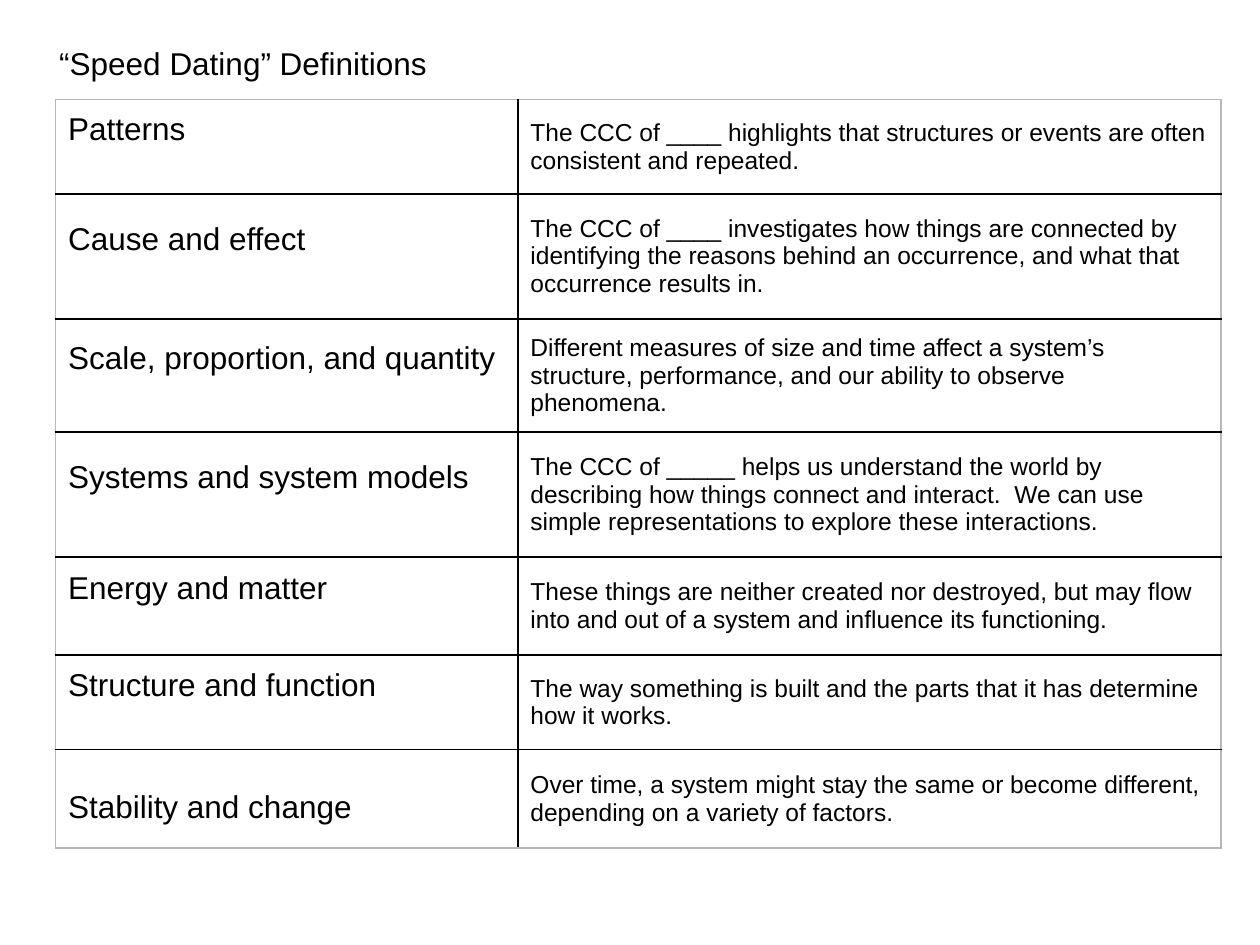
import pptx
import pptx.dml.color
import pptx.enum.text
import pptx.oxml
import pptx.oxml.ns
import pptx.util

Inches, Pt = pptx.util.Inches, pptx.util.Pt

HEADING = "“Speed Dating” Definitions"
# concept, definition, row height in inches
CONCEPTS = [
    ("Patterns",
     "The CCC of ____ highlights that structures or events are often consistent and repeated.", 0.75),
    ("Cause and effect",
     "The CCC of ____ investigates how things are connected by identifying the reasons behind "
     "an occurrence, and what that occurrence results in.", 0.99),
    ("Scale, proportion, and quantity",
     "Different measures of size and time affect a system’s structure, performance, and our "
     "ability to observe phenomena.", 0.9),
    ("Systems and system models",
     "The CCC of _____ helps us understand the world by describing how things connect and "
     "interact.  We can use simple representations to explore these interactions.", 0.99),
    ("Energy and matter",
     "These things are neither created nor destroyed, but may flow into and out of a system "
     "and influence its functioning.", 0.78),
    ("Structure and function",
     "The way something is built and the parts that it has determine how it works.", 0.75),
    ("Stability and change",
     "Over time, a system might stay the same or become different, depending on a variety "
     "of factors.", 0.78),
]

THEME = {
    "font": "Arial", "ink": "000000", "paper": "FFFFFF", "frame": "B7B7B7",
    "large": 18, "small": 14, "rule": 1,
}
SLIDE = (10, 7.5)
GRID_LEFT, GRID_TOP = 0.44, 0.79
COLUMNS = (3.67, 5.58)
CONCEPT_LIFT = 0.32     # bottom margin that raises the concept above the row's middle
LAST_LINE_SPACING = 1.5


def style(paragraph, size):
    formats = {"name": THEME["font"], "size": Pt(size), "bold": False}
    for key, value in formats.items():
        setattr(paragraph.font, key, value)
    paragraph.font.color.rgb = pptx.dml.color.RGBColor.from_string(THEME["ink"])


def add_border(cell, side, color):
    cell._tc.get_or_add_tcPr().append(pptx.oxml.parse_xml(
        f'<a:ln{side} {pptx.oxml.ns.nsdecls("a")} w="{Pt(THEME["rule"])}">'
        f'<a:solidFill><a:srgbClr val="{color}"/></a:solidFill></a:ln{side}>'))


def add_heading(slide):
    heading = slide.shapes.title
    box = {"left": 0.37, "top": 0.3, "width": 5.78, "height": 0.4}
    for key, value in box.items():
        setattr(heading, key, Inches(value))
    frame = heading.text_frame
    frame.text = HEADING
    frame.vertical_anchor = pptx.enum.text.MSO_ANCHOR.TOP
    frame.auto_size = pptx.enum.text.MSO_AUTO_SIZE.SHAPE_TO_FIT_TEXT
    frame.paragraphs[0].alignment = pptx.enum.text.PP_ALIGN.LEFT
    style(frame.paragraphs[0], THEME["large"])


def add_definitions(slide):
    heights = [height for _, _, height in CONCEPTS]
    grid = slide.shapes.add_table(
        len(CONCEPTS), len(COLUMNS), Inches(GRID_LEFT), Inches(GRID_TOP),
        Inches(sum(COLUMNS)), Inches(sum(heights))).table
    grid.first_row = grid.horz_banding = False
    for column, width in zip(grid.columns, COLUMNS):
        column.width = Inches(width)

    last_row, last_column = len(CONCEPTS) - 1, len(COLUMNS) - 1
    for r, (concept, definition, height) in enumerate(CONCEPTS):
        grid.rows[r].height = Inches(height)
        for c, (words, size) in enumerate([(concept, THEME["large"]),
                                           (definition, THEME["small"])]):
            cell = grid.cell(r, c)
            cell.text = words
            cell.vertical_anchor = pptx.enum.text.MSO_ANCHOR.MIDDLE
            style(cell.text_frame.paragraphs[0], size)
            outer = {"L": c == 0, "R": c == last_column, "T": r == 0, "B": r == last_row}
            for side, on_frame in outer.items():
                add_border(cell, side, THEME["frame" if on_frame else "ink"])
            cell.fill.solid()
            cell.fill.fore_color.rgb = pptx.dml.color.RGBColor.from_string(THEME["paper"])
        if r < last_row:
            grid.cell(r, 0).margin_bottom = Inches(CONCEPT_LIFT)
    grid.cell(last_row, 0).text_frame.paragraphs[0].line_spacing = LAST_LINE_SPACING


def main():
    deck = pptx.Presentation()
    deck.slide_width, deck.slide_height = map(Inches, SLIDE)
    slide = deck.slides.add_slide(deck.slide_layouts.get_by_name("Title Only"))
    add_heading(slide)
    add_definitions(slide)
    deck.save("out.pptx")


if __name__ == "__main__":
    main()
